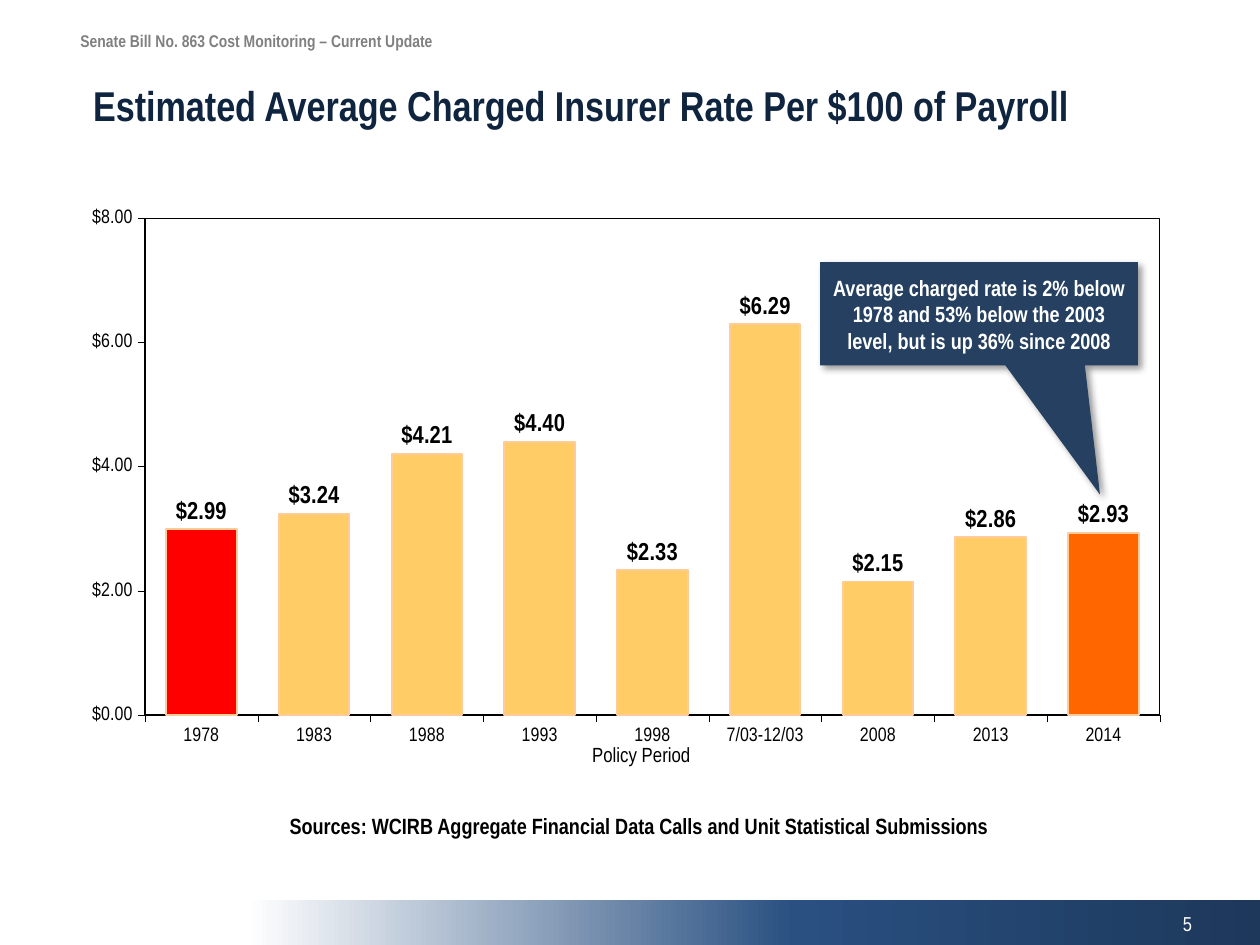
from copy import deepcopy

from pptx import Presentation
from pptx.chart.data import CategoryChartData
from pptx.dml.color import RGBColor
from pptx.enum.chart import XL_CHART_TYPE, XL_LABEL_POSITION, XL_TICK_MARK
from pptx.enum.shapes import MSO_SHAPE
from pptx.enum.text import MSO_ANCHOR, PP_ALIGN
from pptx.oxml import parse_xml
from pptx.oxml.ns import nsdecls, qn
from pptx.util import Inches, Pt

# Content
COLORS = {
    "black": "000000", "white": "FFFFFF", "grey": "808080", "title": "0F243E",
    "callout": "254061", "bar": "FFCC66", "bar_line": "FFCC99",
    "first_bar": "FF0000", "last_bar": "FF6600",
}
FONT = "Arial Narrow"
RATES = {
    "1978": 2.99, "1983": 3.24, "1988": 4.21, "1993": 4.40, "1998": 2.33,
    "7/03-12/03": 6.29, "2008": 2.15, "2013": 2.86, "2014": 2.93,
}
HIGHLIGHTS = {0: "first_bar", len(RATES) - 1: "last_bar"}
RATE_FORMAT = r"\$#,##0.00"
PLOT_AREA = {"x": 0.06, "y": 0.024, "w": 0.928, "h": 0.839}
BAND_STOPS = [(0, "1D385B"), (0.46, "295081"), (1, "FFFFFF")]
CALLOUT = ("Average charged rate is 2% below 1978 and 53% below the 2003 level, "
           "but is up 36% since 2008")

LEFT, CENTER, RIGHT = PP_ALIGN.LEFT, PP_ALIGN.CENTER, PP_ALIGN.RIGHT
TOP, MIDDLE = MSO_ANCHOR.TOP, MSO_ANCHOR.MIDDLE
# text, box, size, bold, color, alignment, anchor, side and top margins
TEXTS = [
    ("Senate Bill No. 863 Cost Monitoring – Current Update",
     (0.54, 0.19, 9.06, 0.26), 9.7, True, "grey", LEFT, TOP, (0.1, 0.05)),
    ("Estimated Average Charged Insurer Rate Per $100 of Payroll",
     (0.63, 0.57, 8.63, 1.05), 23.8, True, "title", LEFT, TOP, (0.11, 0.06)),
    ("5", (7.24, 7.13, 2.33, 0.4), 11.5, False, "white", RIGHT, MIDDLE, (0.11, 0.06)),
    ("Policy Period",
     (1.11, 5.84, 7.96, 0.3), 11.7, False, "black", CENTER, MIDDLE, (0, 0)),
    ("Sources: WCIRB Aggregate Financial Data Calls and Unit Statistical Submissions",
     (1.11, 6.41, 7.92, 0.5), 12.6, True, "black", CENTER, TOP, (0.09, 0.04)),
]


def color(name):
    return RGBColor.from_string(COLORS[name])


def box(values):
    return [Inches(value) for value in values]


def set_font(font, size, bold, color_name):
    font.name, font.size, font.bold = FONT, Pt(size), bold
    font.color.rgb = color(color_name)


def write_text(shape, text, size, bold, color_name, alignment, anchor, margins):
    frame = shape.text_frame
    frame.word_wrap = True
    frame.vertical_anchor = anchor
    frame.margin_left = frame.margin_right = Inches(margins[0])
    frame.margin_top = frame.margin_bottom = Inches(margins[1])
    paragraph = frame.paragraphs[0]
    paragraph.text = text
    paragraph.alignment = alignment
    set_font(paragraph.font, size, bold, color_name)


def add_band(slide):
    band = slide.shapes.add_shape(MSO_SHAPE.RECTANGLE, *box((1.96, 7.14, 8.04, 0.36)))
    band.shadow.inherit = False
    band.line.fill.background()
    band.fill.gradient()
    band.fill.gradient_angle = 180
    stop_list = band.element.spPr.find(qn("a:gradFill")).find(qn("a:gsLst"))
    stop_list.append(deepcopy(stop_list[-1]))
    for stop, (position, hex_color) in zip(band.fill.gradient_stops, BAND_STOPS):
        stop.position = position
        stop.color.rgb = RGBColor.from_string(hex_color)


def style_axis(axis):
    axis.has_major_gridlines = False
    axis.major_tick_mark = XL_TICK_MARK.OUTSIDE
    axis.minor_tick_mark = XL_TICK_MARK.NONE
    axis.format.line.color.rgb = color("black")
    axis.format.line.width = Pt(0.28)
    set_font(axis.tick_labels.font, 11.1, False, "black")


def frame_plot(chart):
    """Fix the inner plot area and outline it."""
    plot_area = chart.element.find(qn("c:chart")).find(qn("c:plotArea"))
    for layout in plot_area.findall(qn("c:layout")):
        plot_area.remove(layout)
    edges = "".join(f'<c:{key} val="{value}"/>' for key, value in PLOT_AREA.items())
    plot_area.insert(0, parse_xml(
        f'<c:layout {nsdecls("c")}><c:manualLayout><c:layoutTarget val="inner"/>'
        f'<c:xMode val="edge"/><c:yMode val="edge"/>{edges}</c:manualLayout></c:layout>'))
    plot_area.append(parse_xml(
        f'<c:spPr {nsdecls("c", "a")}><a:noFill/><a:ln w="{Pt(0.75)}"><a:solidFill>'
        f'<a:srgbClr val="{COLORS["black"]}"/></a:solidFill></a:ln></c:spPr>'))


def add_rate_chart(slide):
    data = CategoryChartData(number_format=RATE_FORMAT)
    data.categories = list(RATES)
    data.add_series("Series 1", list(RATES.values()))
    chart = slide.shapes.add_chart(
        XL_CHART_TYPE.COLUMN_CLUSTERED, *box((0.63, 1.62, 8.68, 4.7)), data).chart
    chart.has_legend = chart.has_title = False
    chart.font.name, chart.font.size, chart.font.bold = "Roboto", Pt(20), True
    chart.font.color.rgb = color("black")

    style_axis(chart.category_axis)
    rate_axis = chart.value_axis
    style_axis(rate_axis)
    rate_axis.minimum_scale, rate_axis.maximum_scale, rate_axis.major_unit = 0, 8, 2
    rate_axis.tick_labels.number_format = RATE_FORMAT
    rate_axis.tick_labels.number_format_is_linked = False

    plot = chart.plots[0]
    plot.gap_width = 60
    plot.vary_by_categories = False
    series = plot.series[0]
    formats = [(series.format, "bar")]
    formats += [(series.points[i].format, name) for i, name in HIGHLIGHTS.items()]
    for bar_format, name in formats:
        bar_format.fill.solid()
        bar_format.fill.fore_color.rgb = color(name)
        bar_format.line.color.rgb = color("bar_line")
        bar_format.line.width = Pt(1.11)

    labels = series.data_labels
    labels.show_value = True
    labels.position = XL_LABEL_POSITION.OUTSIDE_END
    labels.number_format = RATE_FORMAT
    labels.number_format_is_linked = False
    set_font(labels.font, 14, True, "black")
    frame_plot(chart)


def add_callout(slide):
    callout = slide.shapes.add_shape(
        MSO_SHAPE.RECTANGULAR_CALLOUT, *box((6.51, 2.08, 2.52, 0.82)))
    callout.adjustments[0], callout.adjustments[1] = 0.381, 1.75
    callout.fill.solid()
    callout.fill.fore_color.rgb = color("callout")
    callout.line.fill.background()
    callout.shadow.inherit = False
    callout.element.spPr.find(qn("a:effectLst")).append(parse_xml(
        f'<a:outerShdw {nsdecls("a")} blurRad="{Pt(4)}" dist="{Pt(3)}" dir="2700000" '
        f'algn="tl" rotWithShape="0"><a:srgbClr val="{COLORS["black"]}">'
        '<a:alpha val="40000"/></a:srgbClr></a:outerShdw>'))
    write_text(callout, CALLOUT, 12.6, True, "white", CENTER, MIDDLE, (0.09, 0.04))


def main():
    presentation = Presentation()
    presentation.slide_width, presentation.slide_height = Inches(10), Inches(7.5)
    slide = presentation.slides.add_slide(presentation.slide_layouts[6])
    add_band(slide)
    add_rate_chart(slide)
    for text, place, *style in TEXTS:
        write_text(slide.shapes.add_textbox(*box(place)), text, *style)
    add_callout(slide)
    presentation.save("out.pptx")


if __name__ == "__main__":
    main()
